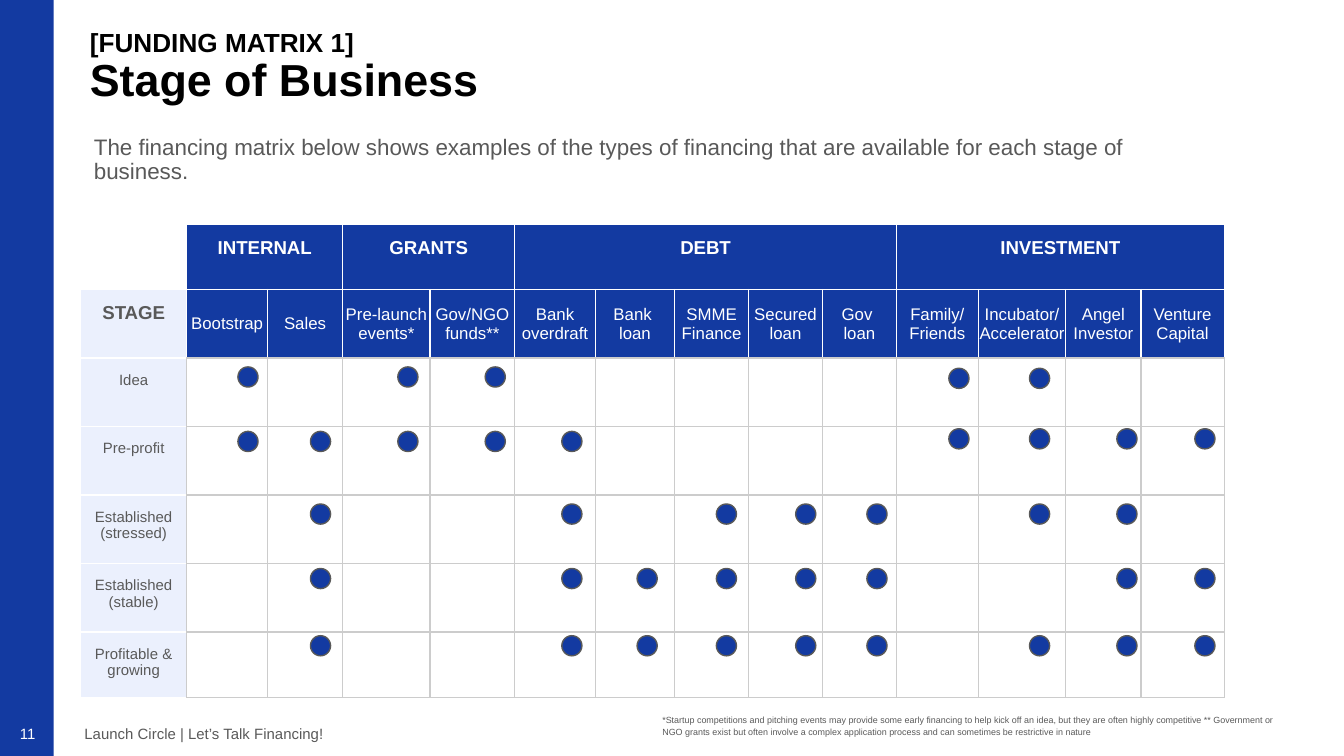
from dataclasses import dataclass

from lxml.etree import SubElement
from pptx import Presentation
from pptx.dml.color import RGBColor
from pptx.enum.shapes import MSO_SHAPE as Shape
from pptx.enum.text import MSO_ANCHOR as Anchor, PP_ALIGN as Align
from pptx.oxml.ns import qn
from pptx.util import Inches, Pt

BLUE, PALE, WHITE, BLACK = "133AA1", "EBF0FD", "FFFFFF", "000000"
GREY, RULE = "595959", "CCCCCC"
FONT = "Arial"
DOT_SIZE = 0.15
PAGE_WIDTH = 10
PAGE_HEIGHT = PAGE_WIDTH * 9 / 16


@dataclass(frozen=True)
class Source:
    name: str
    width: float
    dot_left: float


@dataclass(frozen=True)
class Group:
    name: str
    sources: tuple[Source, ...]


@dataclass(frozen=True)
class Stage:
    name: str
    height: float
    dot_top: float
    investment_top: float
    marks: str


GROUPS = (
    Group("INTERNAL", (Source("Bootstrap", 0.6, 1.77), Source("Sales", 0.56, 2.31))),
    Group("GRANTS", (
        Source("Pre-launch events*", 0.65, 2.96),
        Source("Gov/NGO funds**", 0.63, 3.61),
    )),
    Group("DEBT", (
        Source("Bank overdraft", 0.6, 4.18),
        Source("Bank \nloan", 0.59, 4.74),
        Source("SMME Finance", 0.55, 5.33),
        Source("Secured loan", 0.55, 5.92),
        Source("Gov \nloan", 0.55, 6.45),
    )),
    Group("INVESTMENT", (
        Source("Family/\nFriends", 0.61, 7.06),
        Source("Incubator/\nAccelerator", 0.65, 7.66),
        Source("Angel Investor", 0.56, 8.31),
        Source("Venture Capital", 0.62, 8.89),
    )),
)
STAGES = (
    Stage("Idea", 0.51, 2.73, 2.74, "x.xx.....xx.."),
    Stage("Pre-profit", 0.51, 3.21, 3.19, "xxxxx....xxxx"),
    Stage("Established (stressed)", 0.51, 3.75, 3.75, ".x..x.xxx.xx."),
    Stage("Established (stable)", 0.51, 4.23, 4.23, ".x..xxxxx..xx"),
    Stage("Profitable & growing", 0.47, 4.73, 4.73, ".x..xxxxx.xxx"),
)


def color(value: str) -> RGBColor:
    return RGBColor.from_string(value)


def write(para, text: str, *, size: float, ink: str = GREY, bold: bool = False,
          align=Align.LEFT, spacing: float = 1.0, after: float = 0) -> None:
    para.text = text
    para.alignment = align
    para.line_spacing = spacing
    para.space_after = Pt(after)
    for span in para.runs:
        span.font.name = FONT
        span.font.size = Pt(size)
        span.font.bold = bold
        span.font.color.rgb = color(ink)


def add_text(page, left: float, top: float, width: float, height: float,
             anchor=Anchor.TOP):
    box = page.shapes.add_textbox(Inches(left), Inches(top), Inches(width), Inches(height))
    frame = box.text_frame
    frame.word_wrap = True
    frame.vertical_anchor = anchor
    frame.margin_left = frame.margin_right = Inches(0.1)
    frame.margin_top = frame.margin_bottom = Inches(0.1)
    return frame


def add_solid(page, kind, left: float, top: float, width: float, height: float,
              outline: str = "") -> None:
    shape = page.shapes.add_shape(kind, Inches(left), Inches(top), Inches(width), Inches(height))
    shape.shadow.inherit = False
    shape.fill.solid()
    shape.fill.fore_color.rgb = color(BLUE)
    if outline:
        shape.line.color.rgb = color(outline)
        shape.line.width = Pt(0.75)
    else:
        shape.line.fill.background()


def style_cell(cell, fill: str = "", borders: tuple[str, ...] = (RULE,) * 4,
               side: float = 0.1, anchor=Anchor.TOP) -> None:
    cell.margin_left = cell.margin_right = Inches(side)
    cell.margin_top = cell.margin_bottom = Inches(0.1)
    cell.vertical_anchor = anchor
    properties = cell._tc.get_or_add_tcPr()
    for edge, ink in zip(("lnL", "lnR", "lnT", "lnB"), borders):
        line = SubElement(properties, qn(f"a:{edge}"), w=str(Pt(0.75)))
        SubElement(SubElement(line, qn("a:solidFill")), qn("a:srgbClr"), val=ink)
    if fill:
        cell.fill.solid()
        cell.fill.fore_color.rgb = color(fill)
    else:
        cell.fill.background()


def size_empty_cells(table) -> None:
    for cell in table.iter_cells():
        if not cell.text:
            para = cell.text_frame.paragraphs[0]
            ending = SubElement(para._p, qn("a:endParaRPr"), sz="1700")
            SubElement(ending, qn("a:latin"), typeface=FONT)


def add_matrix(page) -> None:
    sources = [source for group in GROUPS for source in group.sources]
    widths = [0.79] + [source.width for source in sources]
    heights = [0.35, 0.51] + [stage.height for stage in STAGES]
    table = page.shapes.add_table(
        len(heights), len(widths), Inches(0.6), Inches(1.67),
        Inches(sum(widths)), Inches(sum(heights)),
    ).table
    table.first_row = table.horz_banding = False
    for column, width in zip(table.columns, widths):
        column.width = Inches(width)
    for row, height in zip(table.rows, heights):
        row.height = Inches(height)

    white = (WHITE,) * 4
    style_cell(table.cell(0, 0), borders=white)
    start = 1
    for group in GROUPS:
        end = start + len(group.sources)
        for column in range(start, end):
            style_cell(table.cell(0, column), BLUE, white)
        head = table.cell(0, start)
        head.merge(table.cell(0, end - 1))
        write(head.text_frame.paragraphs[0], group.name, size=10, ink=WHITE,
              bold=True, align=Align.CENTER)
        start = end

    corner = table.cell(1, 0)
    style_cell(corner, PALE, white)
    write(corner.text_frame.paragraphs[0], "STAGE", size=10, bold=True, align=Align.CENTER)
    for column, source in enumerate(sources, 1):
        cell = table.cell(1, column)
        style_cell(cell, BLUE, (WHITE, WHITE, WHITE, RULE), 0, Anchor.MIDDLE)
        write(cell.text_frame.paragraphs[0], source.name, size=9, ink=WHITE, align=Align.CENTER)

    for row, stage in enumerate(STAGES, 2):
        label = table.cell(row, 0)
        style_cell(label, PALE, (WHITE, RULE, WHITE, WHITE))
        write(label.text_frame.paragraphs[0], stage.name, size=8, align=Align.CENTER)
        for column in range(1, len(widths)):
            style_cell(table.cell(row, column))
    size_empty_cells(table)


def add_dots(page) -> None:
    for stage in STAGES:
        marks = iter(stage.marks)
        for group in GROUPS:
            top = stage.investment_top if group.name == "INVESTMENT" else stage.dot_top
            for source in group.sources:
                if next(marks) == "x":
                    add_solid(page, Shape.OVAL, source.dot_left, top, DOT_SIZE, DOT_SIZE, GREY)


def main() -> None:
    """Build the funding matrix slide and save it."""
    deck = Presentation()
    deck.slide_width, deck.slide_height = Inches(PAGE_WIDTH), Inches(PAGE_HEIGHT)
    page = deck.slides.add_slide(deck.slide_layouts[6])
    add_solid(page, Shape.RECTANGLE, 0, 0, 0.4, PAGE_HEIGHT)

    note = add_text(page, 4.83, 5.21, 4.83, 0.41)
    write(note.paragraphs[0], "*Startup competitions and pitching events may provide some early "
          "financing to help kick off an idea, but they are often highly competitive ** Government "
          "or NGO grants exist but often involve a complex application process and can sometimes "
          "be restrictive in nature", size=4.8, spacing=1.15, after=12)
    number = add_text(page, 0.05, 5.24, 0.6, 0.43, Anchor.MIDDLE)
    write(number.paragraphs[0], "11", size=8, ink=WHITE)
    footer = add_text(page, 0.53, 5.24, 2.74, 0.43, Anchor.MIDDLE)
    write(footer.paragraphs[0], "Launch Circle | Let’s Talk Financing!", size=8)
    title = add_text(page, 0.57, 0.12, 6.98, 0.79)
    write(title.paragraphs[0], "[FUNDING MATRIX 1]", size=14, ink=BLACK, bold=True, spacing=0.9)
    write(title.add_paragraph(), "Stage of Business", size=24, ink=BLACK, bold=True, spacing=0.9)
    intro = add_text(page, 0.6, 0.91, 8.51, 0.58)
    write(intro.paragraphs[0], "The financing matrix below shows examples of the types of financing "
          "that are available for each stage of business.", size=12, spacing=0.9)

    add_matrix(page)
    add_dots(page)
    deck.save("out.pptx")


if __name__ == "__main__":
    main()
